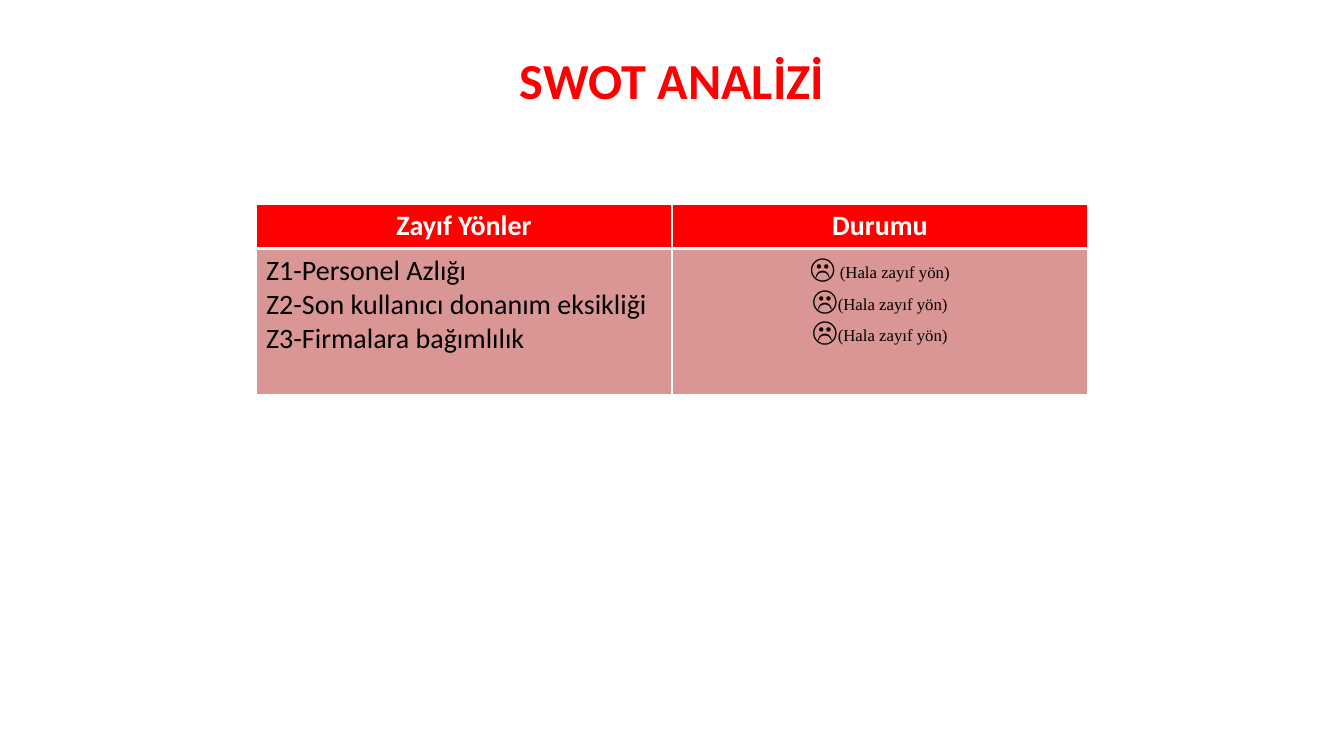
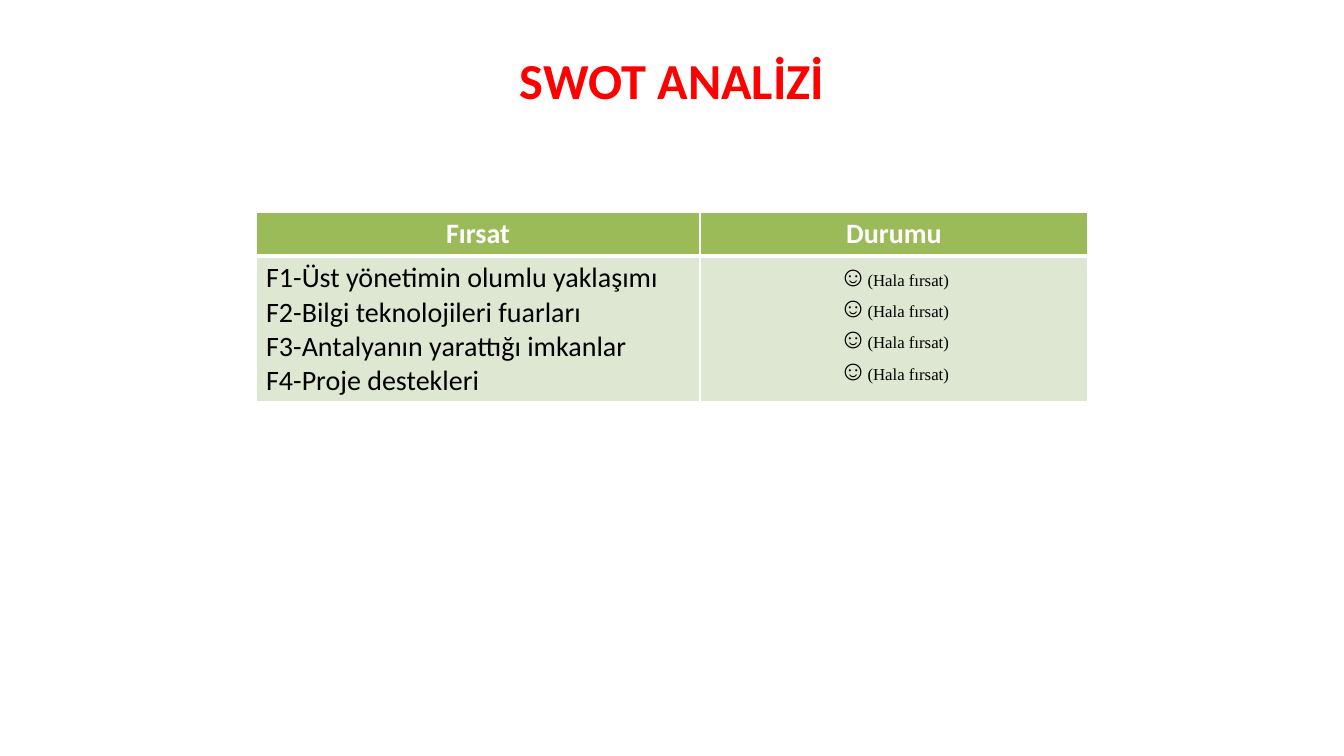
"""Builds two SWOT slides, each with a title and a status table."""
from lxml.etree import SubElement
from pptx import Presentation
from pptx.dml.color import RGBColor as Rgb
from pptx.enum.text import PP_ALIGN as Align
from pptx.oxml import parse_xml
from pptx.oxml.ns import nsdecls, qn
from pptx.util import Pt

COLOURS = {"title": "FF0000", "white": "FFFFFF", "black": "000000",
           "weak_head": "FF0000", "weak_body": "D99694",
           "chance_head": "9BBB59", "chance_body": "DEE7D1"}
TITLE = "SWOT ANALİZİ"
SLIDES = [
    {"theme": "weak", "top": 204, "columns": (416, 416),
     "heads": ("Zayıf Yönler", "Durumu"),
     "items": ["Z1-Personel Azlığı", "Z2-Son kullanıcı donanım eksikliği",
               "Z3-Firmalara bağımlılık"],
     "statuses": [("☹", " (Hala zayıf yön)"), ("☹", "(Hala zayıf yön)"),
                  ("☹", "(Hala zayıf yön)")]},
    {"theme": "chance", "top": 212, "columns": (444, 388),
     "heads": ("Fırsat", "Durumu"),
     "items": ["F1-Üst yönetimin olumlu yaklaşımı",
               "F2-Bilgi teknolojileri fuarları",
               "F3-Antalyanın yarattığı imkanlar", "F4-Proje destekleri"],
     "statuses": [("☺", "(Hala fırsat)")] * 4},
]
SLIDE_SIZE = (1344, 756)
TITLE_BOX = (287, 44, 770, 72)
TABLE_LEFT = 256
ROWS = (44, 146)


def px(length):
    return round(length * 914400 / 100.8)


def style(font, size, face, colour, bold=False):
    font.size, font.name, font.bold = Pt(size), face, bold
    font.color.rgb = Rgb.from_string(COLOURS[colour])


def write(frame, lines, size, colour, bold=False, align=Align.LEFT):
    for number, line in enumerate(lines):
        paragraph = frame.add_paragraph() if number else frame.paragraphs[0]
        paragraph.alignment = align
        if isinstance(line, str):
            paragraph.add_run().text = line
            style(paragraph.font, size, "Calibri", colour, bold)
            continue
        looks = ((size, "Arial"), (12, "Times New Roman"))
        for text, (run_size, face) in zip(line, looks):
            run = paragraph.add_run()
            run.text = text
            style(run.font, run_size, face, colour, bold)


def paint(cell, colour, top, bottom):
    cell.fill.solid()
    cell.fill.fore_color.rgb = Rgb.from_string(COLOURS[colour])
    properties = cell._tc.get_or_add_tcPr()
    edges = {"lnL": 1, "lnR": 1, "lnT": top, "lnB": bottom}
    for place, (edge, width) in enumerate(edges.items()):
        line = parse_xml(f'<a:{edge} {nsdecls("a")} w="{Pt(width)}"/>')
        fill = SubElement(line, qn("a:solidFill"))
        SubElement(fill, qn("a:srgbClr"), val=COLOURS["white"])
        properties.insert(place, line)


def add_title(slide):
    frame = slide.shapes.add_textbox(*map(px, TITLE_BOX)).text_frame
    frame.word_wrap = True
    write(frame, [TITLE], 36, "title", True, Align.CENTER)


def add_status_table(slide, topic):
    columns = topic["columns"]
    box = (TABLE_LEFT, topic["top"], sum(columns), sum(ROWS))
    table = slide.shapes.add_table(len(ROWS), len(columns), *map(px, box)).table
    table.first_row = table.horz_banding = False
    for row, height in zip(table.rows, ROWS):
        row.height = px(height)
    bodies = ((topic["items"], Align.LEFT), (topic["statuses"], Align.CENTER))
    for index, (width, head, (lines, align)) in enumerate(
            zip(columns, topic["heads"], bodies)):
        table.columns[index].width = px(width)
        header, body = table.cell(0, index), table.cell(1, index)
        paint(header, topic["theme"] + "_head", 1, 3)
        paint(body, topic["theme"] + "_body", 3, 1)
        write(header.text_frame, [head], 20, "white", True, Align.CENTER)
        write(body.text_frame, lines, 20, "black", align=align)


def main():
    deck = Presentation()
    deck.slide_width, deck.slide_height = map(px, SLIDE_SIZE)
    for topic in SLIDES:
        slide = deck.slides.add_slide(deck.slide_layouts[6])
        add_status_table(slide, topic)
        add_title(slide)
    deck.save("out.pptx")


if __name__ == "__main__":
    main()
